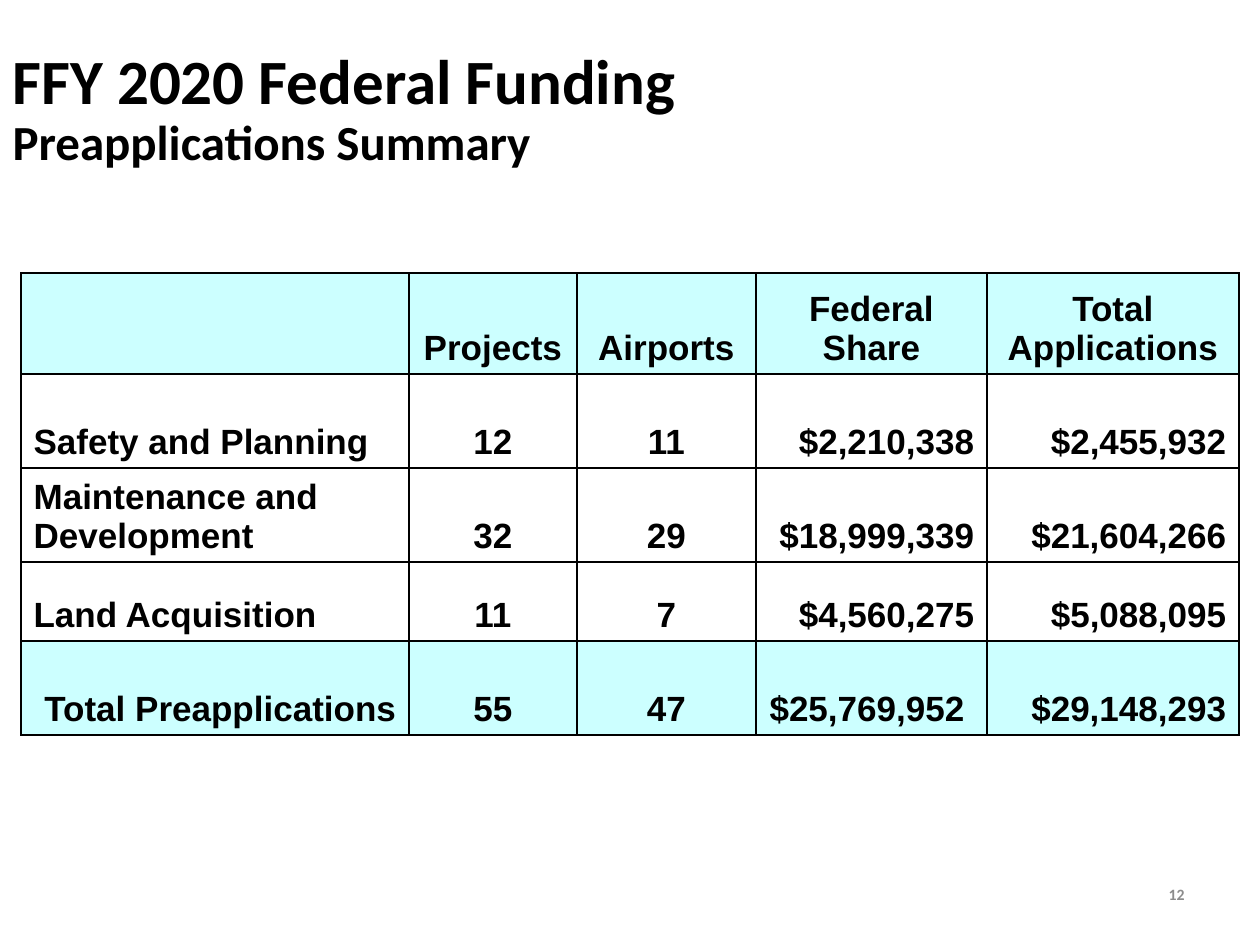
from dataclasses import dataclass

from lxml import etree
from pptx import Presentation
from pptx.dml.color import RGBColor
from pptx.enum.text import MSO_ANCHOR, PP_ALIGN
from pptx.oxml.ns import qn
from pptx.util import Pt

LEFT, MID, RIGHT = PP_ALIGN.LEFT, PP_ALIGN.CENTER, PP_ALIGN.RIGHT
CENTER, BOTTOM = MSO_ANCHOR.MIDDLE, MSO_ANCHOR.BOTTOM
SCALE = 914400 / 126


@dataclass(frozen=True)
class Theme:
    """Colours, fonts and type sizes of the deck."""
    ink: str = "000000"
    gray: str = "8C8C8C"
    paper: str = "FFFFFF"
    tint: str = "CCFFFF"
    head: str = "Calibri"
    body: str = "Arial"
    title: int = 36
    sub: int = 28
    cell: int = 20
    note: int = 9
    line: int = 1


def px(num):
    """Turn pixels into EMU."""
    return round(num * SCALE)


class Page:
    """Holds the style and the current slide."""

    def __init__(self, deck, theme):
        """Add a title-only slide to the deck."""
        self.theme = theme
        self.slide = deck.slides.add_slide(deck.slide_layouts[5])

    def place(self, shape, box):
        """Move and size a shape."""
        shape.left, shape.top, shape.width, shape.height = map(px, box)

    def run(self, para, text, size, face, tone):
        """Add one bold run to a paragraph."""
        run = para.add_run()
        run.text = text
        font = run.font
        font.size, font.name, font.bold = Pt(size), face, True
        font.color.rgb = RGBColor.from_string(tone)

    def title(self, box, main, sub):
        """Fill the title placeholder with two lines."""
        look = self.theme
        shape = self.slide.shapes.title
        self.place(shape, box)
        frame = shape.text_frame
        frame.word_wrap, frame.vertical_anchor = True, CENTER
        para = frame.paragraphs[0]
        para.alignment, para.line_spacing = LEFT, 0.9
        self.run(para, main, look.title, look.head, look.ink)
        para.add_line_break()
        self.run(para, sub, look.sub, look.head, look.ink)

    def note(self, box, text):
        """Add a small right-aligned text box."""
        look = self.theme
        frame = self.slide.shapes.add_textbox(*map(px, box)).text_frame
        frame.word_wrap, frame.vertical_anchor = True, CENTER
        para = frame.paragraphs[0]
        para.alignment = RIGHT
        self.run(para, text, look.note, look.head, look.gray)

    def edge(self, cell):
        """Draw a solid line on each side of a cell."""
        props = cell._tc.get_or_add_tcPr()
        for spot, side in enumerate(("lnL", "lnR", "lnT", "lnB")):
            line = etree.Element(qn(f"a:{side}"), w=str(Pt(self.theme.line)))
            fill = etree.SubElement(line, qn("a:solidFill"))
            etree.SubElement(fill, qn("a:srgbClr"), val=self.theme.ink)
            props.insert(spot, line)

    def cell(self, cell, text, align, tone):
        """Fill and letter one table cell."""
        look = self.theme
        cell.fill.solid()
        cell.fill.fore_color.rgb = RGBColor.from_string(tone)
        cell.vertical_anchor = BOTTOM
        self.edge(cell)
        if text:
            para = cell.text_frame.paragraphs[0]
            para.alignment = align
            self.run(para, text, look.cell, look.body, look.ink)

    def table(self, spot, cols, highs, data):
        """Add a table with a tinted first and last row."""
        look = self.theme
        box = (*spot, sum(cols), sum(highs))
        grid = self.slide.shapes.add_table(
            len(highs), len(cols), *map(px, box)).table
        grid.first_row = grid.horz_banding = False
        for col, wide in zip(grid.columns, cols):
            col.width = px(wide)
        for row, high in zip(grid.rows, highs):
            row.height = px(high)
        last = len(data) - 1
        for r, row in enumerate(data):
            tone = look.tint if r in (0, last) else look.paper
            aligns = [RIGHT if r == last else LEFT, MID, MID, RIGHT, RIGHT]
            if r == 0:
                aligns = [MID] * len(cols)
            for c, text in enumerate(row):
                self.cell(grid.cell(r, c), text, aligns[c], tone)


def main():
    """Build and save the slide."""
    deck = Presentation()
    deck.slide_width, deck.slide_height = px(1260), px(945)
    page = Page(deck, Theme())
    page.title((0, 32, 1260, 157),
               "FFY 2020 Federal Funding", "Preapplications Summary")
    page.table((21, 273), (388, 168, 179, 231, 252), (101, 94, 94, 79, 94), [
        ("", "Projects", "Airports", "Federal Share", "Total Applications"),
        ("Safety and Planning", "12", "11", "$2,210,338", "$2,455,932"),
        ("Maintenance and Development", "32", "29",
         "$18,999,339", "$21,604,266"),
        ("Land Acquisition", "11", "7", "$4,560,275", "$5,088,095"),
        ("Total Preapplications", "55", "47", "$25,769,952 ", "$29,148,293"),
    ])
    page.note((903, 861, 294, 66), "12")
    deck.save("out.pptx")


if __name__ == "__main__":
    main()
